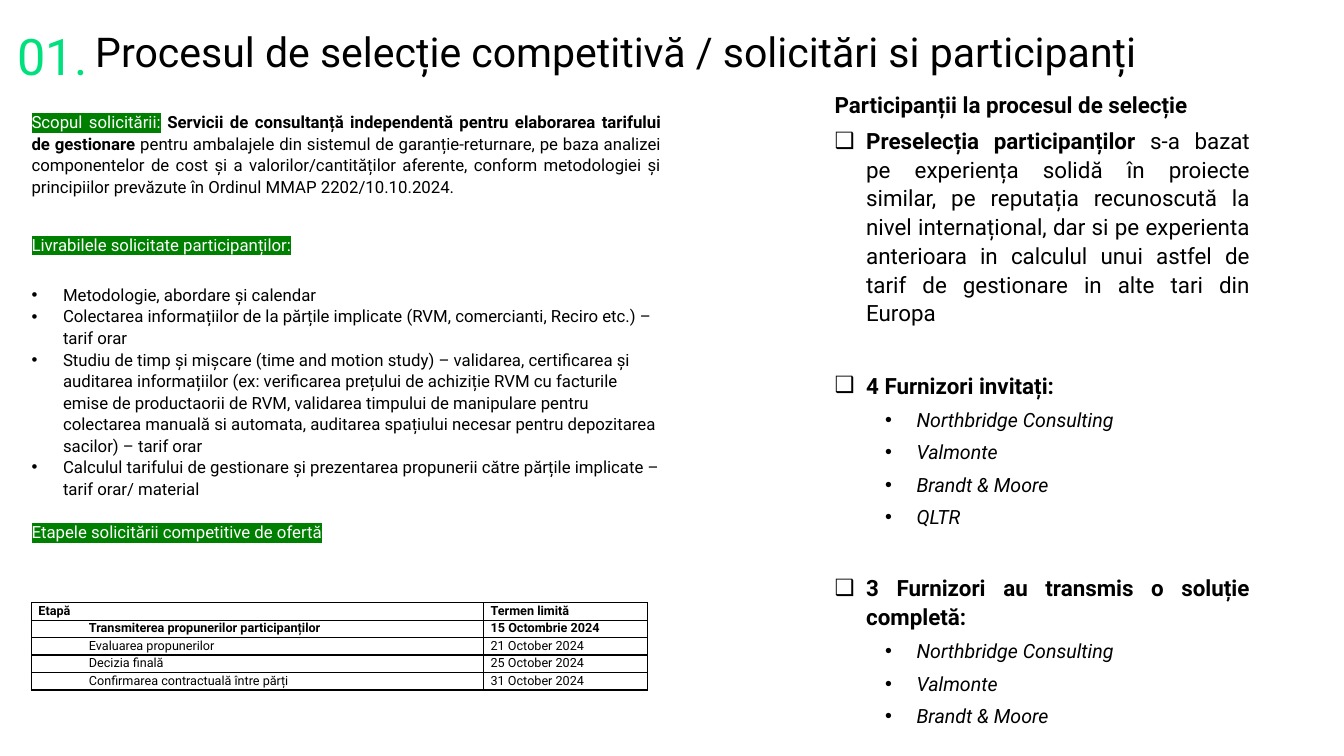
from pptx import Presentation
from pptx.dml.color import RGBColor
from pptx.enum.text import MSO_ANCHOR, MSO_AUTO_SIZE, PP_ALIGN
from pptx.oxml.ns import qn
from pptx.util import Pt
from lxml.etree import SubElement, Element

FONT = "Roboto"
BLACK, WHITE, GREEN, MINT = "000000", "FFFFFF", "008000", "00E17E"
LINE_SPACING = 1.07
HANGING = 22.5
SUB_INDENT = 58.5

SCOPE_LABEL = "Scopul solicitării:"
SCOPE_SERVICE = "Servicii de consultanță independentă pentru elaborarea tarifului de gestionare "
SCOPE_DETAIL = (
    "pentru ambalajele din sistemul de garanție-returnare, pe baza analizei componentelor "
    "de cost și a valorilor/cantităților aferente, conform metodologiei și principiilor "
    "prevăzute în Ordinul MMAP 2202/10.10.2024. "
)
DELIVERABLES = [
    "Metodologie, abordare și calendar",
    "Colectarea informațiilor de la părțile implicate (RVM, comercianti, Reciro etc.) – tarif orar",
    "Studiu de timp și mișcare (time and motion study) – validarea, certificarea și auditarea "
    "informațiilor (ex: verificarea prețului de achiziție RVM cu facturile emise de productaorii "
    "de RVM, validarea timpului de manipulare pentru colectarea manuală si automata, auditarea "
    "spațiului necesar pentru depozitarea sacilor) – tarif orar",
    "Calculul tarifului de gestionare și prezentarea propunerii către părțile implicate – "
    "tarif orar/ material",
]
STAGES = [
    ("Etapă", "Termen limită"),
    ("Transmiterea propunerilor participanților", "15 Octombrie 2024"),
    ("Evaluarea propunerilor", "21 October 2024"),
    ("Decizia finală", "25 October 2024"),
    ("Confirmarea contractuală între părți", "31 October 2024"),
]
PRESELECTION = (
    "s-a bazat pe experiența solidă în proiecte similar, pe reputația recunoscută la nivel "
    "internațional, dar si pe experienta anterioara in calculul unui astfel de tarif de "
    "gestionare in alte tari din Europa"
)
SUPPLIERS = ["Northbridge Consulting", "Valmonte", "Brandt & Moore", "QLTR"]


def rgb(value):
    return RGBColor.from_string(value)


def style_run(run, size, color=BLACK, bold=False, italic=False, highlight=None):
    font = run.font
    font.size, font.name, font.bold, font.italic = Pt(size), FONT, bold, italic
    font.color.rgb = rgb(color)
    if highlight:
        mark = Element(qn("a:highlight"))
        SubElement(mark, qn("a:srgbClr"), val=highlight)
        run.font._element.find(qn("a:solidFill")).addnext(mark)


def place(shape, box, inset=(0, 0)):
    """Move a text shape to a box (left, top, width, height) and clear its inherited layout."""
    shape.left, shape.top, shape.width, shape.height = map(Pt, box)
    frame = shape.text_frame
    frame.word_wrap, frame.auto_size = True, MSO_AUTO_SIZE.NONE
    frame.vertical_anchor = MSO_ANCHOR.TOP
    frame.margin_left = frame.margin_right = Pt(inset[0])
    frame.margin_top = frame.margin_bottom = Pt(inset[1])
    return frame


def add_paragraph(frame, runs, align=PP_ALIGN.JUSTIFY, before=0, after=0,
                  bullet=None, indent=0):
    """Write (text, style) runs as the next paragraph; indent is where the text starts."""
    first = frame.paragraphs[0]
    paragraph = frame.add_paragraph() if first.runs else first
    paragraph.alignment, paragraph.line_spacing = align, LINE_SPACING
    paragraph.space_before, paragraph.space_after = Pt(before), Pt(after)
    paragraph.level = 1 if indent > HANGING else 0
    properties = paragraph._p.get_or_add_pPr()
    properties.set("marL", str(Pt(indent)))
    properties.set("indent", str(Pt(-HANGING if bullet else 0)))
    if bullet:
        SubElement(properties, qn("a:buFont"), typeface="Arial")
        SubElement(properties, qn("a:buChar"), char=bullet)
    else:
        SubElement(properties, qn("a:buNone"))
    for text, style in runs:
        run = paragraph.add_run()
        run.text = text
        style_run(run, **style)


def add_heading(slide, box):
    left, top, width, height = box
    number = slide.shapes.add_textbox(0, 0, 0, 0)
    parts = [
        (number, (left, top, 52, height), "01.", 36, MINT, 47.3),
        (slide.shapes.title, (left + 55.5, top + 11.5, width - 55.5, 30),
         "Procesul de selecție competitivă / solicitări si participanți", 29.3, BLACK, 28.8),
    ]
    for shape, area, text, size, color, spacing in parts:
        frame = place(shape, area)
        frame.text = text
        paragraph = frame.paragraphs[0]
        paragraph.alignment, paragraph.line_spacing = PP_ALIGN.LEFT, Pt(spacing)
        style_run(paragraph.runs[0], size, color)


def fill_request(body, box):
    frame = place(body, box)
    plain = dict(size=12)
    label = dict(size=12, color=WHITE, highlight=GREEN)
    add_paragraph(frame, [(SCOPE_LABEL, label), (" ", plain),
                          (SCOPE_SERVICE, dict(size=12, bold=True)),
                          (SCOPE_DETAIL, plain)], after=5.3)
    add_paragraph(frame, [("Livrabilele solicitate participanților:", label)],
                  PP_ALIGN.LEFT, before=20.7)
    for index, deliverable in enumerate(DELIVERABLES):
        add_paragraph(frame, [(deliverable, plain)], PP_ALIGN.LEFT,
                      before=0 if index else 20.4, bullet="•", indent=HANGING)
    add_paragraph(frame, [("Etapele solicitării competitive de ofertă", label)], before=15.4)


def fill_participants(body, box):
    frame = place(body, box, inset=(7.2, 3.6))
    strong = dict(size=16, bold=True)

    def add_point(runs, before=0):
        add_paragraph(frame, runs, before=before, after=5.3, bullet="❑", indent=HANGING)

    add_paragraph(frame, [("Participanții la procesul de selecție ", strong)], after=5.3)
    add_point([("Preselecția participanților ", strong), (PRESELECTION, dict(size=16))])
    groups = [("4 Furnizori invitați:", SUPPLIERS),
              ("3 Furnizori au transmis o soluție completă:", SUPPLIERS[:3])]
    for heading, suppliers in groups:
        add_point([(heading, strong)], before=25.8)
        for supplier in suppliers:
            add_paragraph(frame, [(supplier, dict(size=14, italic=True))],
                          after=5.3, bullet="•", indent=SUB_INDENT)


def add_borders(cell):
    properties = cell._tc.get_or_add_tcPr()
    for index, side in enumerate(("lnL", "lnR", "lnT", "lnB")):
        line = Element(qn(f"a:{side}"), w=str(Pt(1)))
        fill = SubElement(line, qn("a:solidFill"))
        SubElement(fill, qn("a:srgbClr"), val=BLACK)
        properties.insert(index, line)


def add_stages(slide, box):
    left, top, width, height = map(Pt, box)
    table = slide.shapes.add_table(len(STAGES), 2, left, top, width, height).table
    table.first_row = table.horz_banding = False
    table.columns[0].width = Pt(323)
    table.columns[1].width = width - Pt(323)
    for row, stage in enumerate(STAGES):
        for column, text in enumerate(stage):
            cell = table.cell(row, column)
            cell.margin_left = cell.margin_right = Pt(5)
            cell.margin_top = cell.margin_bottom = 0
            cell.fill.background()
            add_borders(cell)
            add_paragraph(cell.text_frame, [(text, dict(size=9, bold=row < 2))],
                          PP_ALIGN.LEFT, indent=36 if row and not column else 0)


def main():
    deck = Presentation()
    deck.slide_width, deck.slide_height = Pt(960), Pt(540)
    slide = deck.slides.add_slide(deck.slide_layouts[3])
    request, participants = slide.placeholders[1], slide.placeholders[2]
    add_heading(slide, (12.5, 13.5, 904, 46))
    fill_request(request, (22.5, 79, 450, 311))
    fill_participants(participants, (589, 60, 311, 464))
    add_stages(slide, (22.5, 430.5, 440, 62.5))
    deck.save("out.pptx")


if __name__ == "__main__":
    main()
